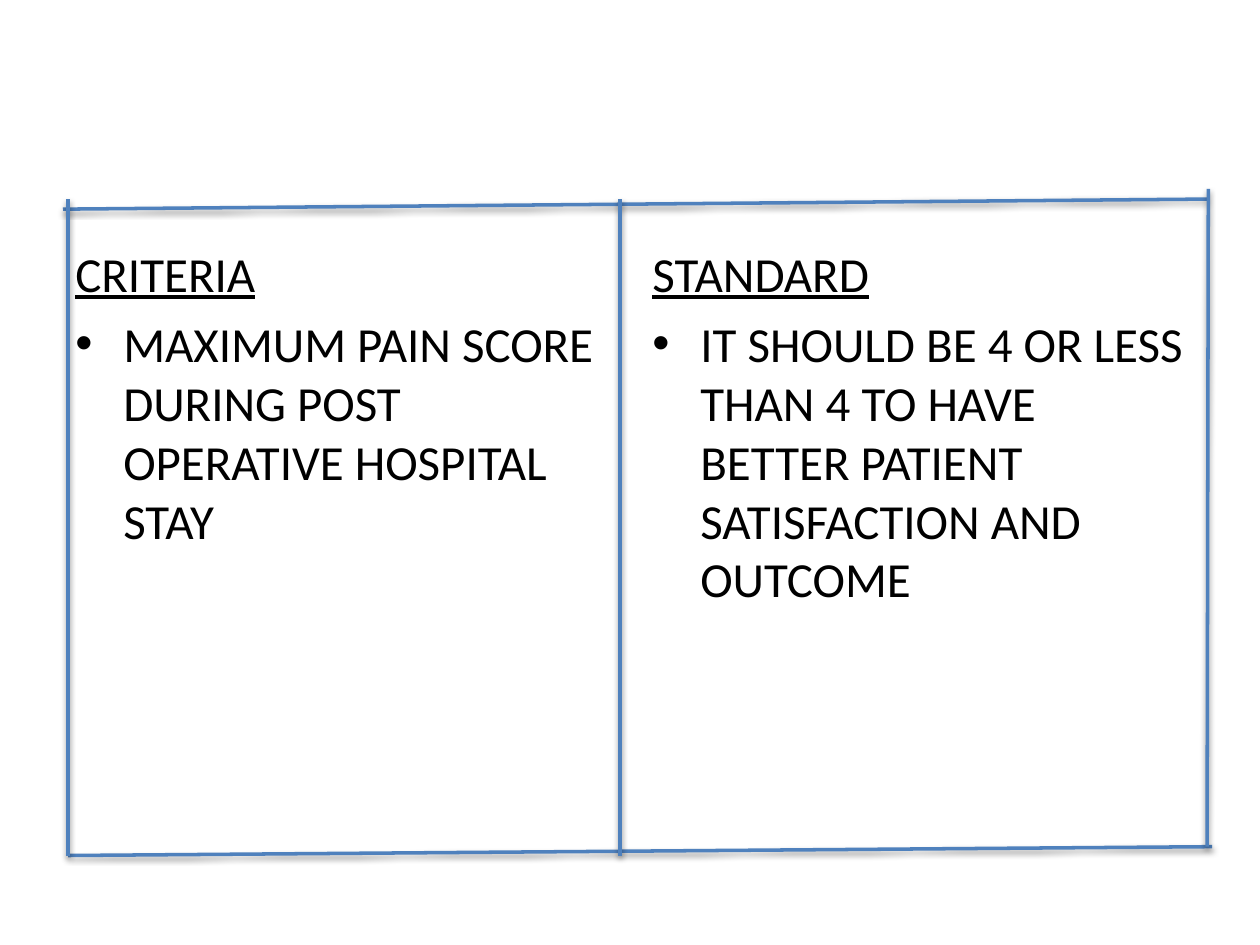
from lxml import etree
from pptx import Presentation
from pptx.dml.color import RGBColor
from pptx.enum.shapes import MSO_CONNECTOR
from pptx.oxml.ns import qn
from pptx.util import Inches, Pt

STRAIGHT = MSO_CONNECTOR.STRAIGHT
HEX = {"text": "000000", "rule": "4F81BD", "shade": "000000"}
HEAD = {"name": "Calibri", "size": Pt(28), "underline": True}
BODY = {**HEAD, "underline": False}


class Page:
    def __init__(self, deck):
        self.slide = deck.slides.add_slide(deck.slide_layouts[6])

    def para(self, para, text, style, bullet=False):
        para.text = text
        props = para._p.get_or_add_pPr()
        props.set("marL", str(Inches(0.38)))
        props.set("indent", str(-Inches(0.38)))
        if bullet:
            para.space_before = Pt(6.7)
            font = etree.SubElement(props, qn("a:buFont"))
            font.set("typeface", "Arial")
            mark = etree.SubElement(props, qn("a:buChar"))
            mark.set("char", "•")
        else:
            etree.SubElement(props, qn("a:buNone"))
        font = para.runs[0].font
        for key, value in style.items():
            setattr(font, key, value)
        font.color.rgb = RGBColor.from_string(HEX["text"])

    def column(self, left, title, point):
        box = self.slide.shapes.add_textbox(
            Inches(left), Inches(1.88), Inches(4.42), Inches(3.84))
        frame = box.text_frame
        frame.word_wrap = True
        self.para(frame.paragraphs[0], title, HEAD)
        self.para(frame.add_paragraph(), point, BODY, bullet=True)

    def rule(self, *ends):
        line = self.slide.shapes.add_connector(
            STRAIGHT, *[Inches(end) for end in ends])
        line.line.width = Pt(2)
        line.line.color.rgb = RGBColor.from_string(HEX["rule"])
        effects = etree.SubElement(line._element.spPr, qn("a:effectLst"))
        shade = etree.SubElement(effects, qn("a:outerShdw"))
        form = {"blurRad": Pt(3.1), "dist": Pt(1.6), "dir": 90 * 60000, "rotWithShape": 0}
        for key, value in form.items():
            shade.set(key, str(value))
        tint = etree.SubElement(shade, qn("a:srgbClr"))
        tint.set("val", HEX["shade"])
        etree.SubElement(tint, qn("a:alpha")).set("val", "38000")


def main():
    deck = Presentation()
    deck.slide_width, deck.slide_height = Inches(10), Inches(7.5)
    page = Page(deck)
    page.column(0.5, "CRITERIA",
                "MAXIMUM PAIN SCORE DURING POST OPERATIVE HOSPITAL STAY")
    page.column(5.08, "STANDARD",
                "IT SHOULD BE 4 OR LESS THAN 4 TO HAVE BETTER PATIENT "
                "SATISFACTION AND OUTCOME")
    for ends in (
        (0.5, 1.66, 9.58, 1.58),
        (0.54, 6.79, 9.62, 6.72),
        (0.54, 1.58, 0.54, 6.79),
        (9.58, 6.72, 9.59, 1.5),
        (4.92, 6.79, 4.92, 1.58),
    ):
        page.rule(*ends)
    deck.save("out.pptx")


if __name__ == "__main__":
    main()
